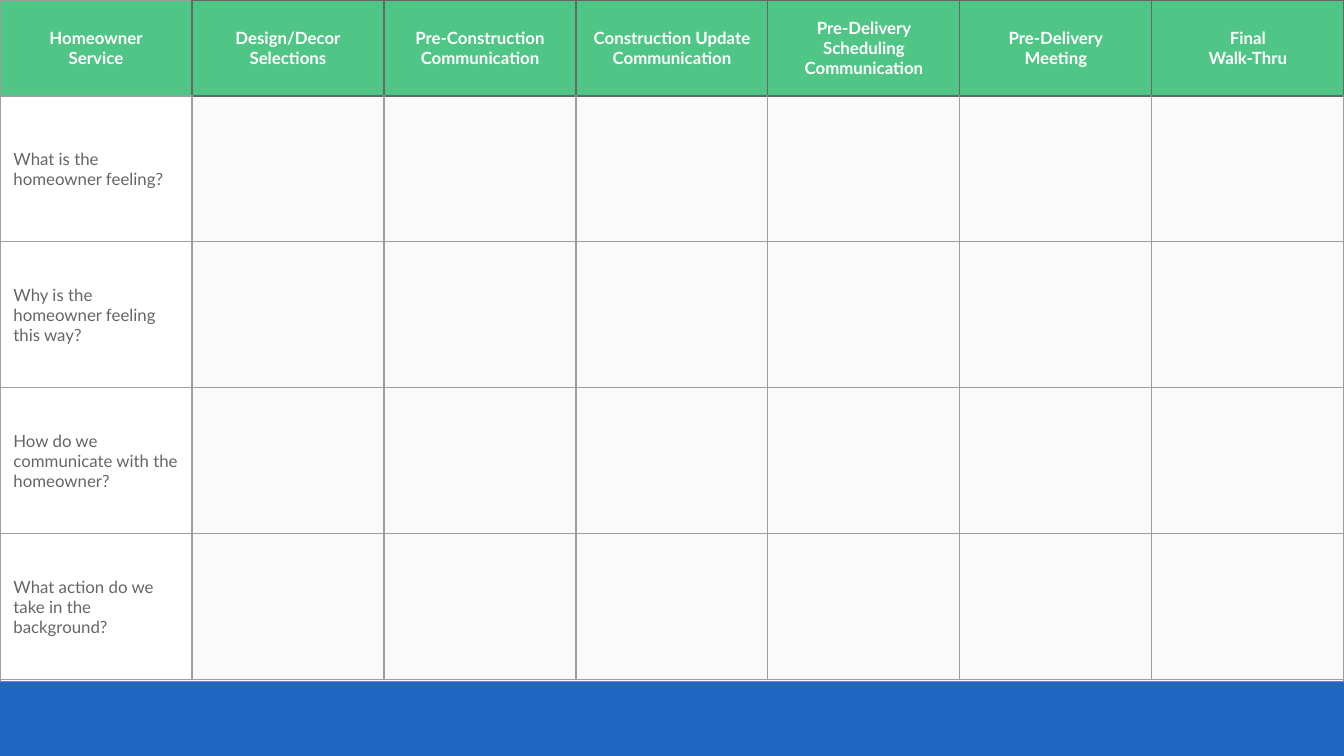
from lxml.etree import SubElement
from pptx import Presentation
from pptx.dml.color import RGBColor
from pptx.enum.shapes import MSO_SHAPE
from pptx.enum.text import MSO_ANCHOR, PP_ALIGN
from pptx.oxml import parse_xml
from pptx.oxml.ns import nsdecls, qn
from pptx.util import Pt

# Content: one list of paragraphs per stage, one question per row
STAGES = [
    ["Homeowner", "Service"],
    ["Design/Decor", "Selections"],
    ["Pre-Construction", "Communication"],
    ["Construction Update Communication"],
    ["Pre-Delivery Scheduling Communication"],
    ["Pre-Delivery", "Meeting"],
    ["Final", "Walk-Thru"],
]
QUESTIONS = [
    "What is the homeowner feeling?",
    "Why is the homeowner feeling this way?",
    "How do we communicate with the homeowner?",
    "What action do we take in the background?",
]

BLUE = RGBColor(0x20, 0x66, 0xC5)
GREEN = RGBColor(0x4F, 0xC5, 0x86)
WHITE = RGBColor(0xFF, 0xFF, 0xFF)
PALE = RGBColor(0xFA, 0xFA, 0xFA)
DARK_GRAY = RGBColor(0x66, 0x66, 0x66)
MID_GRAY = RGBColor(0x88, 0x88, 0x88)
LIGHT_GRAY = RGBColor(0x9E, 0x9E, 0x9E)

WIDTH, HEIGHT = 720, 405
PANEL_HEIGHT = 365.25
HEADER_HEIGHT, ROW_HEIGHT = 51.4, 78.2
LINE_WIDTH = 0.75

HEADER_FONT = {"name": "Lato", "size": Pt(9), "bold": True}
QUESTION_FONT = {"name": "Lato", "size": Pt(9), "bold": False}
CELL_FORMAT = {"vertical_anchor": MSO_ANCHOR.MIDDLE}
CELL_FORMAT.update({f"margin_{side}": Pt(7.2) for side in ("left", "right", "top", "bottom")})


def write_cell(cell, lines, font_format, color, alignment):
    cell.text = "\n".join(lines)
    for para in cell.text_frame.paragraphs:
        para.alignment = alignment
        for span in para.runs:
            for name, value in font_format.items():
                setattr(span.font, name, value)
            span.font.color.rgb = color


def set_borders(cell, colors):
    """Draw the four cell borders; they must come before the cell fill."""
    properties = cell._tc.get_or_add_tcPr()
    for position, side in enumerate("LRTB"):
        border = parse_xml(f'<a:ln{side} {nsdecls("a")} w="{Pt(LINE_WIDTH)}"/>')
        fill = SubElement(border, qn("a:solidFill"))
        SubElement(fill, qn("a:srgbClr"), val=str(colors[side]))
        properties.insert(position, border)


def border_colors(row, column):
    colors = dict.fromkeys("LRTB", LIGHT_GRAY)
    if row == 0:
        colors = dict.fromkeys("LRTB", DARK_GRAY) if column else {**colors, "R": DARK_GRAY}
    elif row == 1 and column:
        colors["T"] = DARK_GRAY
    return colors


deck = Presentation()
deck.slide_width, deck.slide_height = Pt(WIDTH), Pt(HEIGHT)
page = deck.slides.add_slide(deck.slide_layouts[6])
page.background.fill.solid()
page.background.fill.fore_color.rgb = BLUE

# White panel behind the table
panel = page.shapes.add_shape(MSO_SHAPE.RECTANGLE, 0, 0, Pt(WIDTH), Pt(PANEL_HEIGHT))
panel.shadow.inherit = False
panel.fill.solid()
panel.fill.fore_color.rgb = WHITE
panel.line.color.rgb = MID_GRAY
panel.line.width = Pt(LINE_WIDTH)

# Journey table: stages across, questions down
row_heights = [HEADER_HEIGHT] + [ROW_HEIGHT] * len(QUESTIONS)
table = page.shapes.add_table(
    len(row_heights), len(STAGES), 0, 0, Pt(WIDTH), Pt(sum(row_heights))
).table
table.first_row = table.horz_banding = False
for column in table.columns:
    column.width = Pt(WIDTH / len(STAGES))
for row, height in zip(table.rows, row_heights):
    row.height = Pt(height)

for row_index, row in enumerate(table.rows):
    for column_index, cell in enumerate(row.cells):
        for name, value in CELL_FORMAT.items():
            setattr(cell, name, value)
        if row_index == 0:
            write_cell(cell, STAGES[column_index], HEADER_FONT, WHITE, PP_ALIGN.CENTER)
        elif column_index == 0:
            write_cell(cell, [QUESTIONS[row_index - 1]], QUESTION_FONT, DARK_GRAY, PP_ALIGN.LEFT)
        if row_index and not column_index:
            cell.fill.background()
        else:
            cell.fill.solid()
            cell.fill.fore_color.rgb = PALE if row_index else GREEN
        set_borders(cell, border_colors(row_index, column_index))

deck.save("out.pptx")
